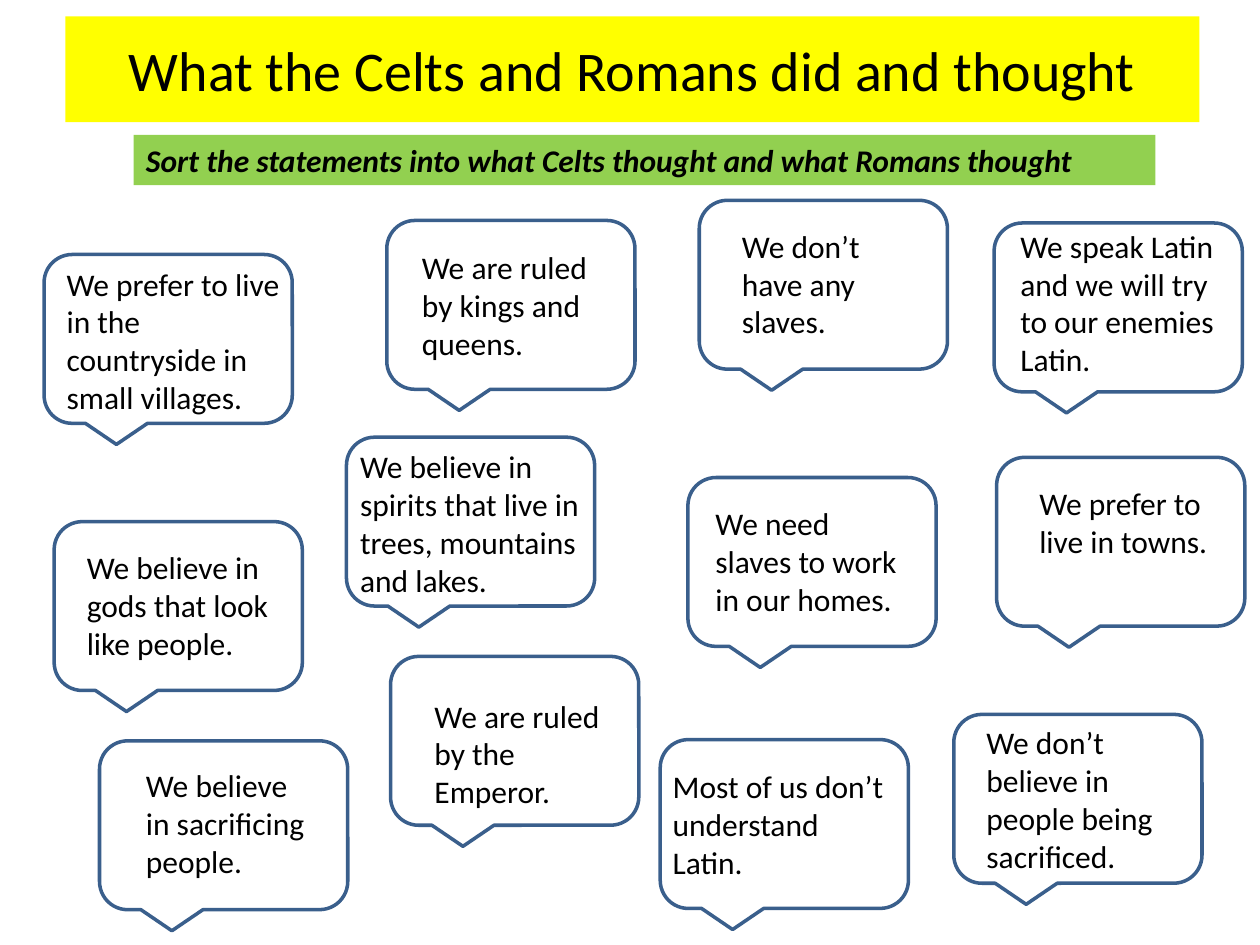
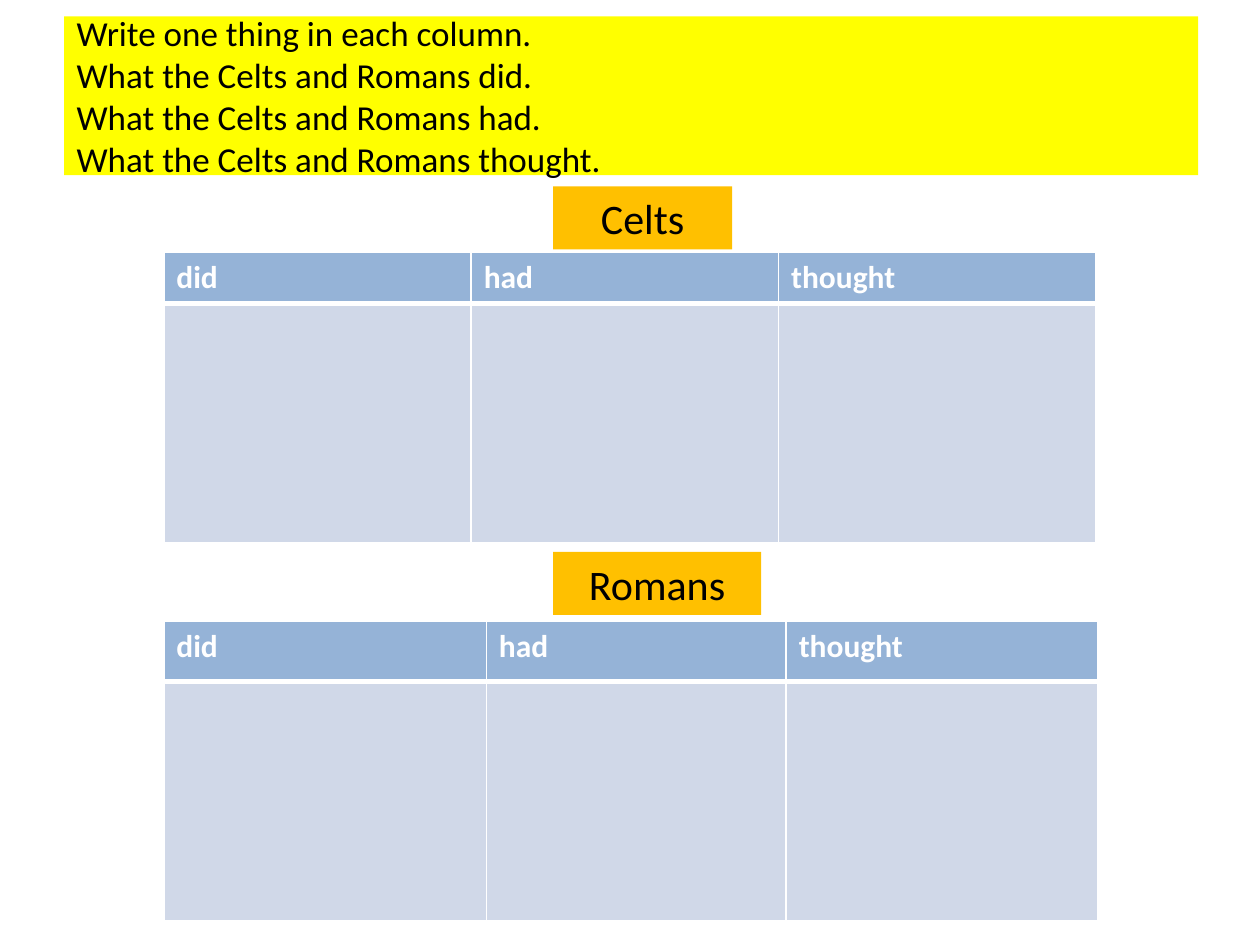
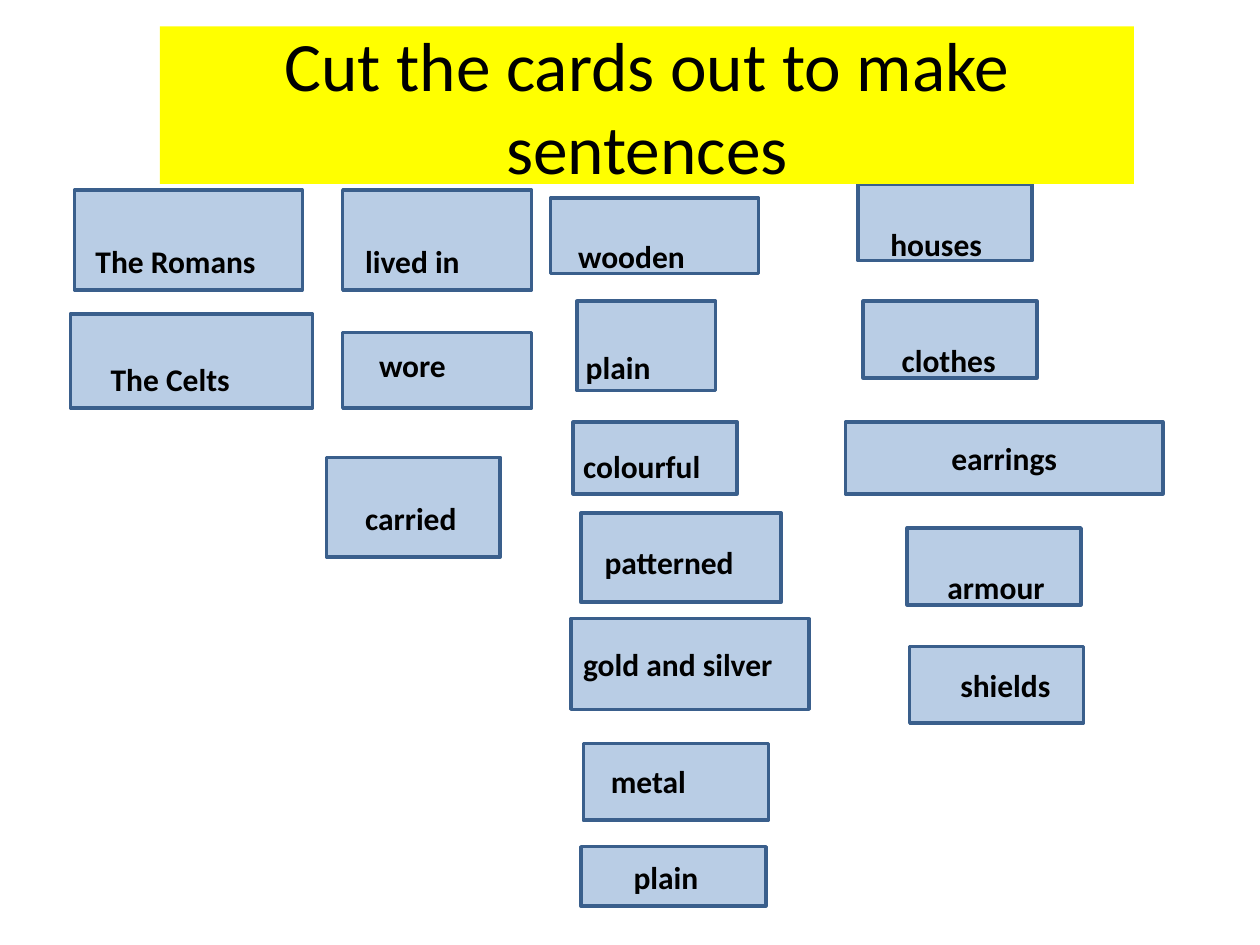
import pptx
import pptx.util
import pptx.dml.color
import pptx.enum.shapes
import pptx.enum.text
import pptx.oxml.ns
from lxml import etree

PX = 9144
FONT = "Calibri"
INK = {
    "black": "000000", "white": "FFFFFF", "yellow": "FFFF00",
    "green": "92D050", "amber": "FFC000", "edge": "3A5F8C",
    "card": "B9CDE5", "head": "95B3D7", "body": "D0D8E8",
}
RGB = {name: pptx.dml.color.RGBColor.from_string(code) for name, code in INK.items()}
RECT = pptx.enum.shapes.MSO_SHAPE.RECTANGLE
BUBBLE = pptx.enum.shapes.MSO_SHAPE.ROUNDED_RECTANGULAR_CALLOUT
LEFT = pptx.enum.text.PP_ALIGN.LEFT
MID = pptx.enum.text.PP_ALIGN.CENTER


def put(page, box, fill=None, edge=False, kind=RECT):
    place = [n * PX for n in box]
    if fill is None:
        shape = page.shapes.add_textbox(*place)
    else:
        shape = page.shapes.add_shape(kind, *place)
        shape.shadow.inherit = False
        shape.fill.solid()
        shape.fill.fore_color.rgb = RGB[fill]
        if edge:
            shape.line.color.rgb = RGB["edge"]
            shape.line.width = pptx.util.Pt(2)
        else:
            shape.line.fill.background()
    shape.text_frame.word_wrap = True
    return shape


def write(item, text, size=18, align=LEFT, bold=False, slant=False, ink="black"):
    para = item.text_frame.paragraphs[0]
    para.alignment = align
    for num, line in enumerate(text.split("\n")):
        if num:
            para.add_line_break()
        run = para.add_run()
        run.text = line
        font = run.font
        font.name = FONT
        font.size = pptx.util.Pt(size)
        font.bold = bold
        font.italic = slant
        font.color.rgb = RGB[ink]


deck = pptx.Presentation()
deck.slide_width = 1000 * PX
deck.slide_height = 750 * PX
sort, grid, cards = [deck.slides.add_slide(deck.slide_layouts[6]) for _ in range(3)]

write(put(sort, (52, 13, 900, 84), "yellow"),
      "What the Celts and Romans did and thought", 32, MID)
write(put(sort, (106, 107, 811, 40), "green"),
      "Sort the statements into what Celts thought and what Romans thought",
      bold=True, slant=True)

views = [
    (35, 202, (43, 205, 189, 131), "We prefer to live in the countryside in small villages."),
    (307, 175, (325, 192, 161, 101), "We are ruled by kings and queens."),
    (555, 159, (579, 175, 150, 101), "We don’t have any slaves."),
    (789, 177, (800, 175, 177, 131), "We speak Latin and we will try to our enemies Latin."),
    (43, 414, (59, 430, 165, 101), "We believe in gods that look like people."),
    (275, 347, (276, 350, 196, 131),
     "We believe in spirits that live in trees, mountains and lakes."),
    (546, 379, (558, 395, 173, 101), "We need slaves to work in our homes."),
    (791, 363, (815, 379, 157, 71), "We prefer to live in towns."),
    (79, 588, (106, 603, 150, 101), "We believe in sacrificing people."),
    (310, 521, (335, 548, 156, 101), "We are ruled by the Emperor."),
    (524, 587, (524, 604, 189, 101), "Most of us don’t understand Latin."),
    (757, 567, (773, 569, 165, 131), "We don’t believe in people being sacrificed."),
]
for left, top, area, text in views:
    put(sort, (left, top, 197, 134), "white", True, BUBBLE)
    write(put(sort, area), text)

write(put(grid, (51, 13, 900, 126), "yellow"),
      "Write one thing in each column.\nWhat the Celts and Romans did.\n"
      "What the Celts and Romans had.\nWhat the Celts and Romans thought.", 20)

tribes = [
    ("Celts", (439, 148, 142, 50), 200, (244, 244, 252), (41, 190)),
    ("Romans", (439, 438, 165, 50), 493, (256, 238, 247), (48, 190)),
]
for name, box, top, wides, highs in tribes:
    frame = grid.shapes.add_table(2, 3, 130 * PX, top * PX, sum(wides) * PX, sum(highs) * PX)
    table = frame.table
    for row, high in zip(table.rows, highs):
        row.height = high * PX
    for num, (wide, word) in enumerate(zip(wides, ("did", "had", "thought"))):
        table.columns[num].width = wide * PX
        write(table.cell(0, num), word, bold=True, ink="white")
        for row, fill, thick in ((0, "head", "lnB"), (1, "body", "lnT")):
            cell = table.cell(row, num)
            props = cell._tc.get_or_add_tcPr()
            for side in ("lnL", "lnR", "lnT", "lnB"):
                width = pptx.util.Pt(3 if side == thick else 1)
                line = etree.SubElement(props, pptx.oxml.ns.qn("a:" + side), w=str(width))
                paint = etree.SubElement(line, pptx.oxml.ns.qn("a:solidFill"))
                etree.SubElement(paint, pptx.oxml.ns.qn("a:srgbClr"), val=INK["white"])
            cell.fill.solid()
            cell.fill.fore_color.rgb = RGB[fill]
    write(put(grid, box, "amber"), name, 24, MID)

words = [
    ("The Romans", (59, 151, 181, 79), (66, 187, 206, 40), LEFT),
    ("The Celts", (56, 249, 192, 75), (78, 281, 181, 40), LEFT),
    ("lived in", (272, 151, 150, 79), (280, 187, 126, 40), LEFT),
    ("wore", (272, 264, 150, 60), (291, 270, 102, 40), LEFT),
    ("carried", (259, 363, 138, 79), (280, 391, 142, 40), LEFT),
    ("wooden", (437, 157, 165, 60), (449, 183, 130, 40), LEFT),
    ("plain", (458, 239, 110, 71), (455, 271, 118, 40), LEFT),
    ("colourful", (455, 335, 130, 57), (453, 350, 130, 40), LEFT),
    ("patterned", (461, 407, 159, 71), (470, 426, 155, 40), LEFT),
    ("gold and silver", (453, 491, 189, 72), (453, 507, 197, 40), LEFT),
    ("metal", (463, 590, 147, 61), (475, 600, 130, 40), LEFT),
    ("plain", (461, 672, 147, 47), (493, 676, 87, 40), LEFT),
    ("houses", (681, 146, 138, 61), (689, 174, 108, 40), MID),
    ("clothes", (685, 239, 138, 61), (695, 266, 116, 40), MID),
    ("armour", (720, 419, 138, 61), (734, 446, 113, 40), MID),
    ("shields", (722, 513, 138, 61), (736, 524, 124, 40), MID),
]
for word, box, area, align in words:
    put(cards, box, "card", True)
    write(put(cards, area), word, align=align, bold=True)
write(put(cards, (671, 335, 252, 57), "card", True), "earrings", align=MID, bold=True)
write(put(cards, (127, 21, 773, 125), "yellow"),
      "Cut the cards out to make sentences", 39.6, MID)

deck.save("out.pptx")
